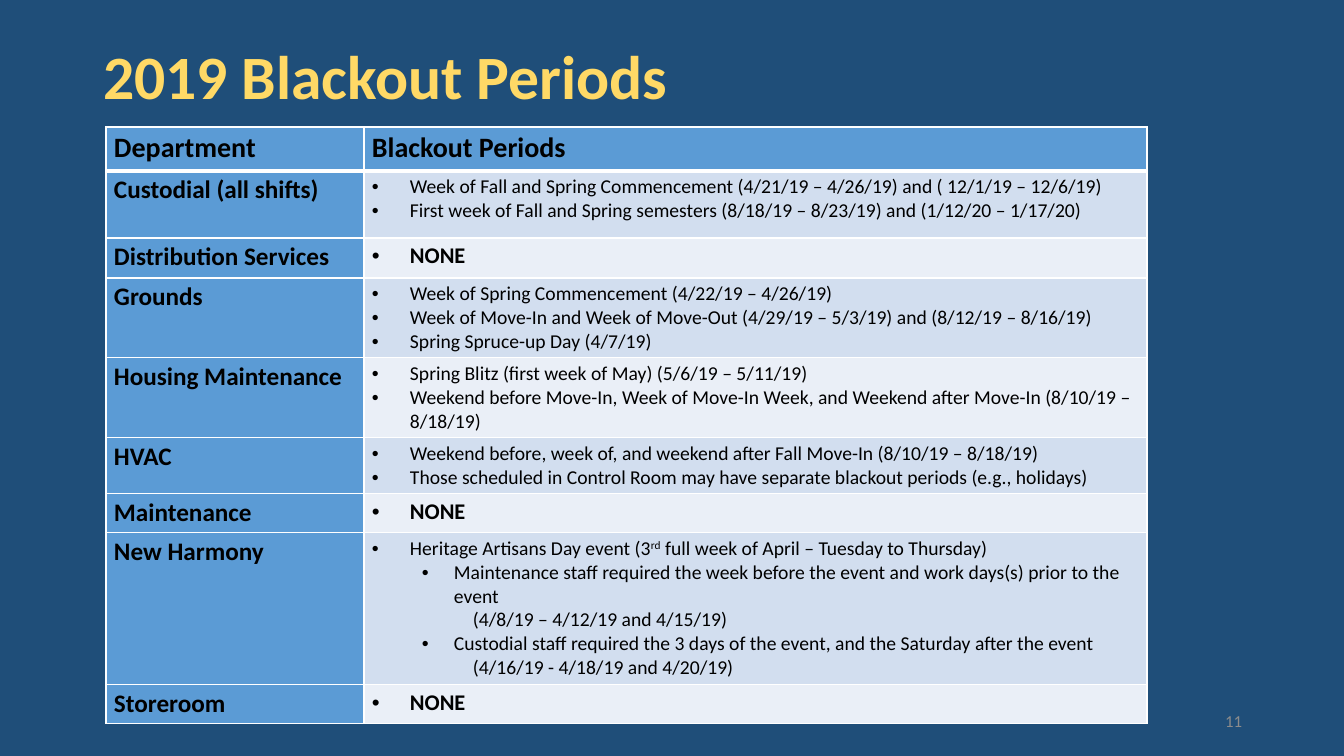
from dataclasses import dataclass

from lxml.etree import SubElement
from pptx import Presentation
from pptx.dml.color import RGBColor
from pptx.enum.text import MSO_ANCHOR, MSO_AUTO_SIZE, PP_ALIGN
from pptx.oxml.ns import qn
from pptx.util import Emu, Pt


@dataclass(frozen=True)
class Theme:
    font: str = "Calibri"
    background: str = "1F4E79"
    title: str = "FFD966"
    text: str = "000000"
    page_number: str = "8C8C8C"
    label_fill: str = "5B9BD5"
    bands: tuple[str, str] = ("D2DEEF", "EAEFF7")
    border: str = "FFFFFF"
    title_size: int = 44
    header_size: int = 20
    label_size: int = 18
    none_size: int = 16
    detail_size: int = 14
    number_size: int = 12


@dataclass(frozen=True)
class Style:
    size: int
    bold: bool = False
    color: str = Theme.text
    margin: int = 0
    indent: int = 0
    level: int = 0


@dataclass(frozen=True)
class Line:
    text: str  # text between two ^ marks is superscript
    style: Style


@dataclass(frozen=True)
class Department:
    name: str
    height: int
    lines: tuple[Line, ...]


THEME = Theme()
HEADER = Style(THEME.header_size, bold=True)
LABEL = Style(THEME.label_size, bold=True)
BULLET = Style(THEME.detail_size, margin=38, indent=-38)
SUB_BULLET = Style(THEME.detail_size, margin=82, indent=-32, level=1)
DATES = Style(THEME.detail_size, margin=101)
NONE = (Line("NONE", Style(THEME.none_size, bold=True, margin=38, indent=-38)),)

HEADER_HEIGHT = 44
COLUMN_WIDTHS = (258, 783)
DEPARTMENTS = (
    Department("Custodial (all shifts)", 67, (
        Line("Week of Fall and Spring Commencement (4/21/19 – 4/26/19) and ( 12/1/19 – 12/6/19)", BULLET),
        Line("First week of Fall and Spring semesters (8/18/19 – 8/23/19) and (1/12/20 – 1/17/20)", BULLET),
    )),
    Department("Distribution Services", 40, NONE),
    Department("Grounds", 80, (
        Line("Week of Spring Commencement (4/22/19 – 4/26/19)", BULLET),
        Line("Week of Move-In and Week of Move-Out (4/29/19 – 5/3/19) and (8/12/19 – 8/16/19)", BULLET),
        Line("Spring Spruce-up Day (4/7/19)", BULLET),
    )),
    Department("Housing Maintenance", 80, (
        Line("Spring Blitz (first week of May) (5/6/19 – 5/11/19)", BULLET),
        Line("Weekend before Move-In, Week of Move-In Week, and Weekend after Move-In (8/10/19 – 8/18/19)", BULLET),
    )),
    Department("HVAC", 56, (
        Line("Weekend before, week of, and weekend after Fall Move-In (8/10/19 – 8/18/19)", BULLET),
        Line("Those scheduled in Control Room may have separate blackout periods (e.g., holidays)", BULLET),
    )),
    Department("Maintenance", 39, NONE),
    Department("New Harmony", 152, (
        Line("Heritage Artisans Day event (3^rd^ full week of April – Tuesday to Thursday)", BULLET),
        Line("Maintenance staff required the week before the event and work days(s) prior to the event", SUB_BULLET),
        Line("(4/8/19 – 4/12/19 and 4/15/19)", DATES),
        Line("Custodial staff required the 3 days of the event, and the Saturday after the event", SUB_BULLET),
        Line("(4/16/19 - 4/18/19 and 4/20/19)", DATES),
    )),
    Department("Storeroom", 39, NONE),
)


def px(length: int) -> Emu:
    return Emu(round(length * 12192000 / 1344))


def write_line(para, line: Line) -> None:
    style = line.style
    if style.margin:
        para.level = style.level
        properties = para._p.get_or_add_pPr()
        properties.set("marL", str(px(style.margin)))
        properties.set("indent", str(px(style.indent)))
        if style.indent:
            SubElement(properties, qn("a:buFont"), typeface="Arial")
            SubElement(properties, qn("a:buChar"), char="•")
    for index, piece in enumerate(line.text.split("^")):
        span = para.add_run()
        span.text = piece
        if index % 2:
            span._r.get_or_add_rPr().set("baseline", "30000")
    para.font.name = THEME.font
    para.font.size = Pt(style.size)
    para.font.bold = style.bold
    para.font.color.rgb = RGBColor.from_string(style.color)


def write_lines(frame, lines: tuple[Line, ...]) -> None:
    for index, line in enumerate(lines):
        write_line(frame.add_paragraph() if index else frame.paragraphs[0], line)


def place(shape, left: int, top: int, width: int, height: int) -> None:
    shape.left, shape.top = px(left), px(top)
    shape.width, shape.height = px(width), px(height)


def draw_cell(cell, lines: tuple[Line, ...], fill: str, top_border: int, bottom_border: int) -> None:
    borders = {"lnL": 1, "lnR": 1, "lnT": top_border, "lnB": bottom_border}
    properties = cell._tc.get_or_add_tcPr()
    for side, points in borders.items():
        border = SubElement(properties, qn(f"a:{side}"), w=str(Pt(points)))
        paint = SubElement(border, qn("a:solidFill"))
        SubElement(paint, qn("a:srgbClr"), val=THEME.border)
    cell.fill.solid()
    cell.fill.fore_color.rgb = RGBColor.from_string(fill)
    cell.margin_left = cell.margin_right = px(8)
    cell.margin_top = cell.margin_bottom = px(4)
    write_lines(cell.text_frame, lines)


def draw_table(page) -> None:
    heights = [HEADER_HEIGHT] + [department.height for department in DEPARTMENTS]
    table = page.shapes.add_table(
        len(heights), len(COLUMN_WIDTHS),
        px(106), px(127), px(sum(COLUMN_WIDTHS)), px(sum(heights)),
    ).table
    table.first_row = table.horz_banding = False
    for column, width in zip(table.columns, COLUMN_WIDTHS):
        column.width = px(width)
    for row, height in zip(table.rows, heights):
        row.height = px(height)
    # Header row
    for column, heading in enumerate(("Department", "Blackout Periods")):
        draw_cell(table.cell(0, column), (Line(heading, HEADER),), THEME.label_fill, 1, 3)
    # Department rows
    for row, department in enumerate(DEPARTMENTS, start=1):
        top_border = 3 if row == 1 else 1
        name = (Line(department.name, LABEL),)
        draw_cell(table.cell(row, 0), name, THEME.label_fill, top_border, 1)
        draw_cell(table.cell(row, 1), department.lines, THEME.bands[(row - 1) % 2], top_border, 1)


def main() -> None:
    deck = Presentation()
    deck.slide_width, deck.slide_height = px(1344), px(756)
    page = deck.slides.add_slide(deck.slide_layouts[5])
    page.background.fill.solid()
    page.background.fill.fore_color.rgb = RGBColor.from_string(THEME.background)

    # Title
    title = page.shapes.title
    place(title, 93, 7, 1159, 146)
    frame = title.text_frame
    frame.auto_size = MSO_AUTO_SIZE.NONE
    frame.vertical_anchor = MSO_ANCHOR.MIDDLE
    write_lines(frame, (Line("2019 Blackout Periods", Style(THEME.title_size, True, THEME.title)),))
    frame.paragraphs[0].alignment = PP_ALIGN.LEFT
    frame.paragraphs[0].line_spacing = 0.9

    draw_table(page)

    # Page number
    number = page.shapes.add_textbox(px(950), px(701), px(302), px(40))
    frame = number.text_frame
    frame.word_wrap = True
    frame.vertical_anchor = MSO_ANCHOR.MIDDLE
    write_lines(frame, (Line("11", Style(THEME.number_size, color=THEME.page_number)),))
    frame.paragraphs[0].alignment = PP_ALIGN.RIGHT

    deck.save("out.pptx")


if __name__ == "__main__":
    main()
